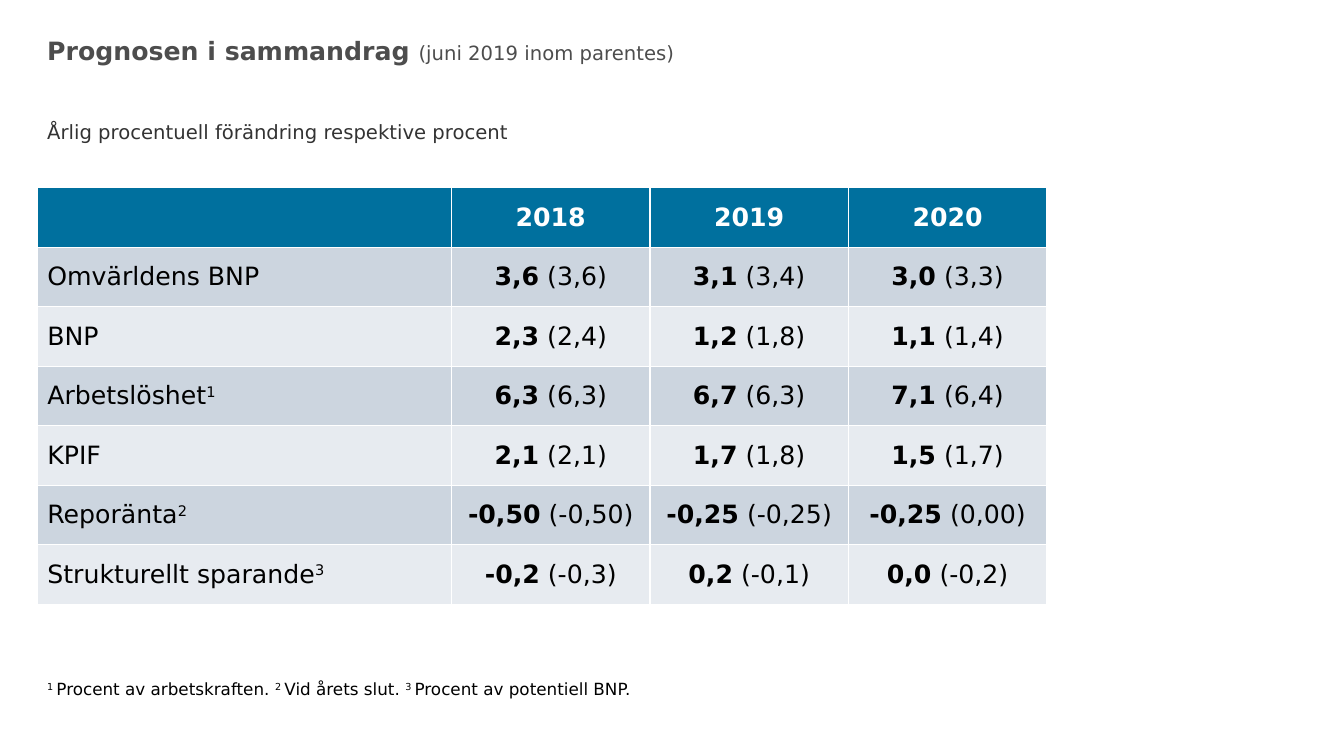
from pptx import Presentation
from pptx.dml.color import RGBColor
from pptx.enum.text import MSO_ANCHOR, PP_ALIGN
from pptx.util import Cm, Pt

FONT = "DejaVu Sans"
WHITE = RGBColor(0xFF, 0xFF, 0xFF)
BLACK = RGBColor(0x00, 0x00, 0x00)
TITLE_GREY = RGBColor(0x4D, 0x4D, 0x4D)
TEXT_GREY = RGBColor(0x33, 0x33, 0x33)
HEADER_BLUE = RGBColor(0x00, 0x70, 0x9E)
BANDS = [RGBColor(0xCC, 0xD5, 0xDF), RGBColor(0xE7, 0xEB, 0xF0)]

LEFT = Cm(0.94)
YEARS = ["2018", "2019", "2020"]
# Label, footnote mark, then (forecast, previous forecast) for each year
FORECASTS = [
    ("Omvärldens BNP", "", [("3,6", "3,6"), ("3,1", "3,4"), ("3,0", "3,3")]),
    ("BNP", "", [("2,3", "2,4"), ("1,2", "1,8"), ("1,1", "1,4")]),
    ("Arbetslöshet", "1", [("6,3", "6,3"), ("6,7", "6,3"), ("7,1", "6,4")]),
    ("KPIF", "", [("2,1", "2,1"), ("1,7", "1,8"), ("1,5", "1,7")]),
    ("Reporänta", "2", [("-0,50", "-0,50"), ("-0,25", "-0,25"), ("-0,25", "0,00")]),
    ("Strukturellt sparande", "3", [("-0,2", "-0,3"), ("0,2", "-0,1"), ("0,0", "-0,2")]),
]
FOOTNOTES = [
    ("1 ", "Procent av arbetskraften. "),
    ("2 ", "Vid årets slut. "),
    ("3 ", "Procent av potentiell BNP."),
]


def add_span(para, text, size, color, bold=False, raised=False):
    """Append a run; a raised run is superscript."""
    span = para.add_run()
    span.text = text
    span.font.name = FONT
    span.font.size = Pt(size)
    span.font.color.rgb = color
    span.font.bold = bold
    if raised:
        span.font._element.set("baseline", "30000")


def add_line(page, top, height, anchor=MSO_ANCHOR.TOP):
    """Add a wide text box and return its first paragraph."""
    box = page.shapes.add_textbox(LEFT, top, Cm(24.05), height)
    box.text_frame.word_wrap = True
    box.text_frame.vertical_anchor = anchor
    return box.text_frame.paragraphs[0]


deck = Presentation()
deck.slide_width = Cm(33.87)
deck.slide_height = Cm(19.05)
page = deck.slides.add_slide(deck.slide_layouts[6])

title = add_line(page, Cm(0.76), Cm(1.4))
add_span(title, "Prognosen i sammandrag ", 18, TITLE_GREY, bold=True)
add_span(title, "(juni 2019 inom parentes)", 14, TITLE_GREY)

subtitle = add_line(page, Cm(2.34), Cm(1.4), MSO_ANCHOR.BOTTOM)
add_span(subtitle, "Årlig procentuell förändring respektive procent", 14, TEXT_GREY)

# The default table style supplies the white rules between cells
row_count = len(FORECASTS) + 1
table = page.shapes.add_table(
    row_count, len(YEARS) + 1, LEFT, Cm(4.73), Cm(25.44), Cm(1.5) * row_count
).table
table.columns[0].width = Cm(10.44)
for column, year in enumerate(YEARS, start=1):
    table.columns[column].width = Cm(5)
    add_span(table.cell(0, column).text_frame.paragraphs[0], year, 18, WHITE, bold=True)

for row, (label, mark, values) in enumerate(FORECASTS, start=1):
    para = table.cell(row, 0).text_frame.paragraphs[0]
    add_span(para, label, 18, BLACK)
    if mark:
        add_span(para, mark, 18, BLACK, raised=True)
    for column, (current, previous) in enumerate(values, start=1):
        para = table.cell(row, column).text_frame.paragraphs[0]
        add_span(para, current, 18, BLACK, bold=True)
        add_span(para, f" ({previous})", 18, BLACK)

for row in range(row_count):
    for column, cell in enumerate(table.rows[row].cells):
        cell.vertical_anchor = MSO_ANCHOR.MIDDLE
        cell.fill.solid()
        cell.fill.fore_color.rgb = BANDS[(row - 1) % 2] if row else HEADER_BLUE
        if column:
            cell.text_frame.paragraphs[0].alignment = PP_ALIGN.CENTER

footer = add_line(page, Cm(16.99), Cm(1.73))
for mark, note in FOOTNOTES:
    add_span(footer, mark, 12, BLACK, raised=True)
    add_span(footer, note, 12, BLACK)

deck.save("out.pptx")
